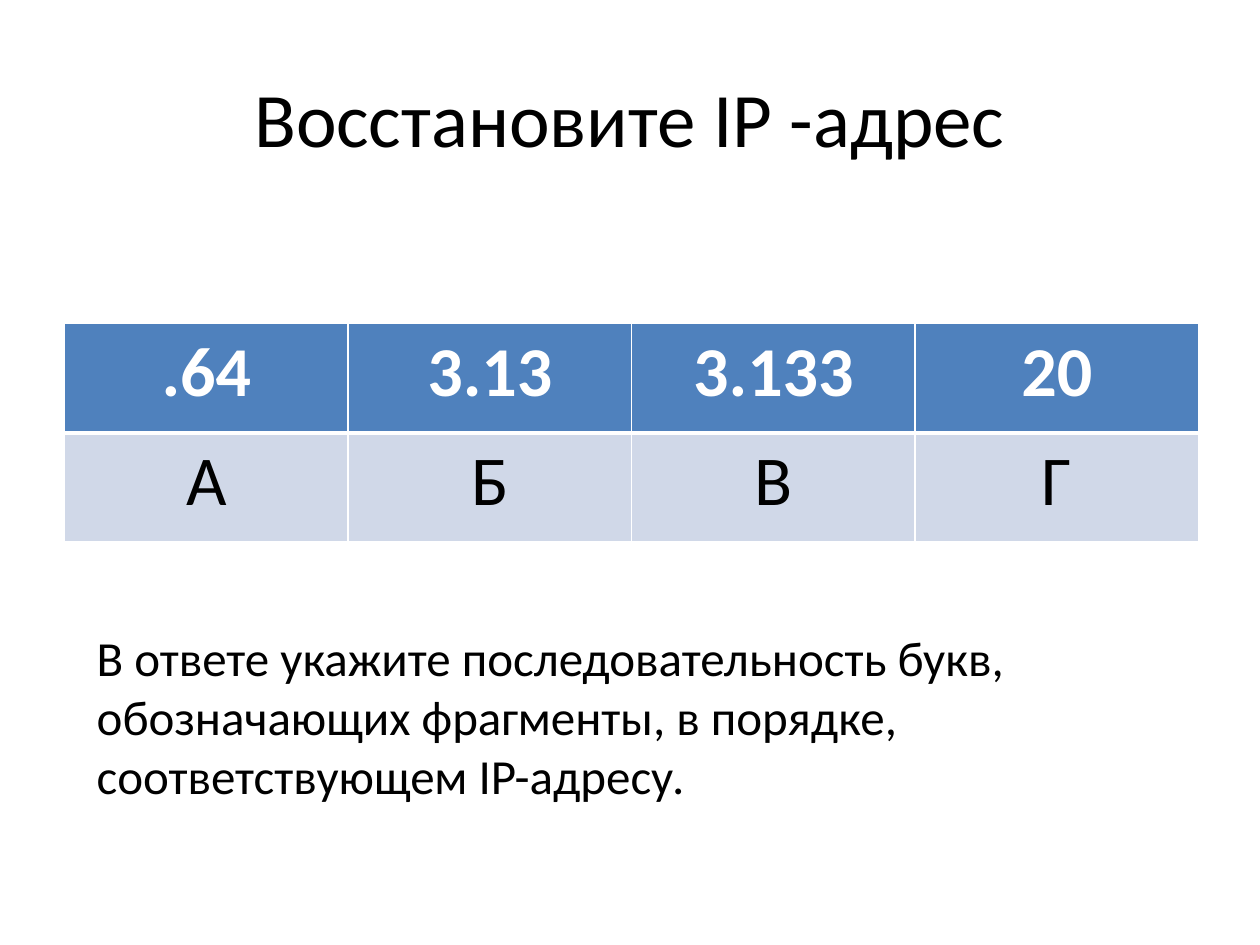
from dataclasses import dataclass

from lxml.etree import SubElement
from pptx import Presentation
from pptx.dml.color import RGBColor
from pptx.enum.text import MSO_ANCHOR, PP_ALIGN
from pptx.oxml.ns import qn
from pptx.util import Pt

FONT = "Calibri"
BLACK = RGBColor(0x00, 0x00, 0x00)
WHITE = RGBColor(0xFF, 0xFF, 0xFF)
BLUE = RGBColor(0x4F, 0x81, 0xBD)
PALE_BLUE = RGBColor(0xD0, 0xD8, 0xE8)

THIN, THICK = 1, 3


@dataclass
class RowStyle:
    texts: list[str]
    fill: RGBColor
    color: RGBColor
    bold: bool
    top: float
    bottom: float


ROWS = [
    RowStyle([".64", "3.13", "3.133", "20"], BLUE, WHITE, True, THIN, THICK),
    RowStyle(["А", "Б", "В", "Г"], PALE_BLUE, BLACK, False, THICK, THIN),
]


def write(tf, text: str, *, size: float, color: RGBColor = BLACK,
          bold: bool = False, align: PP_ALIGN = PP_ALIGN.LEFT) -> None:
    p = tf.paragraphs[0]
    p.alignment = align
    r = p.add_run()
    r.text = text
    r.font.name = FONT
    r.font.size = Pt(size)
    r.font.bold = bold
    r.font.color.rgb = color


def add_text(s, text: str, left: float, top: float, width: float, height: float,
             *, anchor: MSO_ANCHOR = MSO_ANCHOR.TOP, **fmt) -> None:
    sp = s.shapes.add_textbox(Pt(left), Pt(top), Pt(width), Pt(height))
    tf = sp.text_frame
    tf.word_wrap = True
    tf.vertical_anchor = anchor
    write(tf, text, **fmt)


def set_borders(cell, top: float, bottom: float) -> None:
    tc_pr = cell._tc.get_or_add_tcPr()
    for tag, width in (("lnL", THIN), ("lnR", THIN), ("lnT", top), ("lnB", bottom)):
        ln = SubElement(tc_pr, qn(f"a:{tag}"), w=str(Pt(width)))
        fill = SubElement(ln, qn("a:solidFill"))
        SubElement(fill, qn("a:srgbClr"), val=str(WHITE))


def add_fragment_table(s, left: float, top: float, col_width: float,
                       row_height: float) -> None:
    n_rows, n_cols = len(ROWS), len(ROWS[0].texts)
    table = s.shapes.add_table(n_rows, n_cols, Pt(left), Pt(top),
                               Pt(col_width * n_cols), Pt(row_height * n_rows)).table
    for col in table.columns:
        col.width = Pt(col_width)
    for i, row in enumerate(ROWS):
        table.rows[i].height = Pt(row_height)
        for j, text in enumerate(row.texts):
            cell = table.cell(i, j)
            set_borders(cell, row.top, row.bottom)
            cell.fill.solid()
            cell.fill.fore_color.rgb = row.fill
            write(cell.text_frame, text, size=40, color=row.color,
                  bold=row.bold, align=PP_ALIGN.CENTER)


def main() -> None:
    prs = Presentation()
    prs.slide_width, prs.slide_height = Pt(720), Pt(540)
    s = prs.slides.add_slide(prs.slide_layouts[6])

    # Title
    add_text(s, "Восстановите IP -адрес", 36, 21.6, 648, 90, size=44,
             align=PP_ALIGN.CENTER, anchor=MSO_ANCHOR.MIDDLE)

    # Address fragments and their letters
    add_fragment_table(s, 36.9, 185, col_width=162, row_height=62.4)

    # Task
    add_text(s, "В ответе укажите последовательность букв, обозначающих "
                "фрагменты, в порядке, соответствующем IP-адресу.",
             48.2, 355, 623.6, 109, size=28)

    prs.save("out.pptx")


if __name__ == "__main__":
    main()
